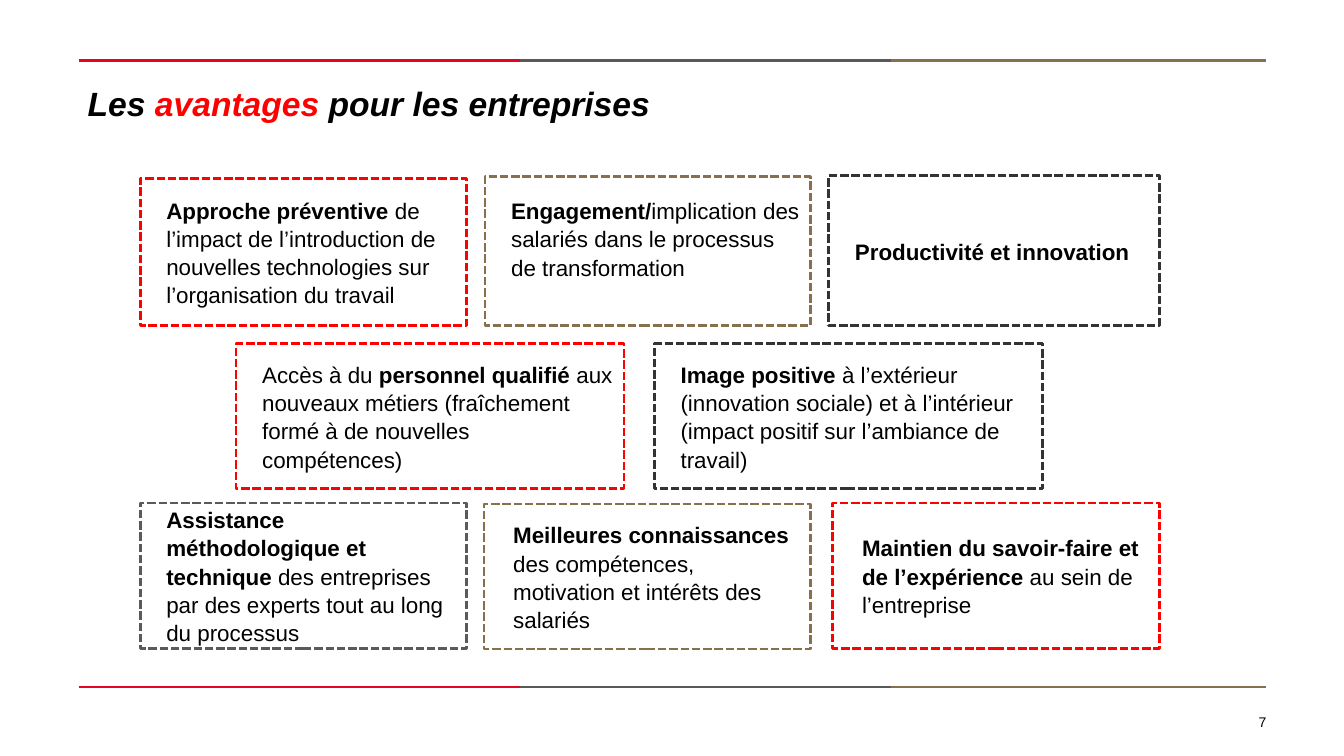
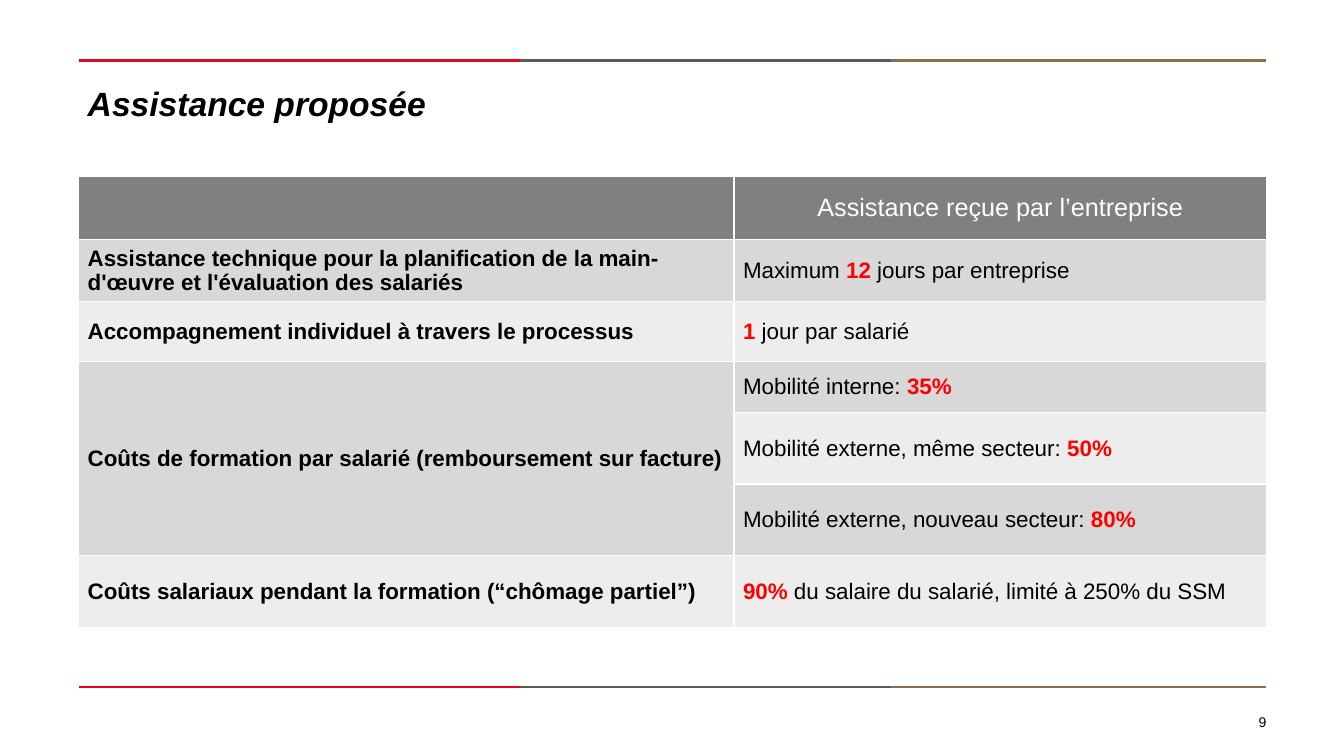
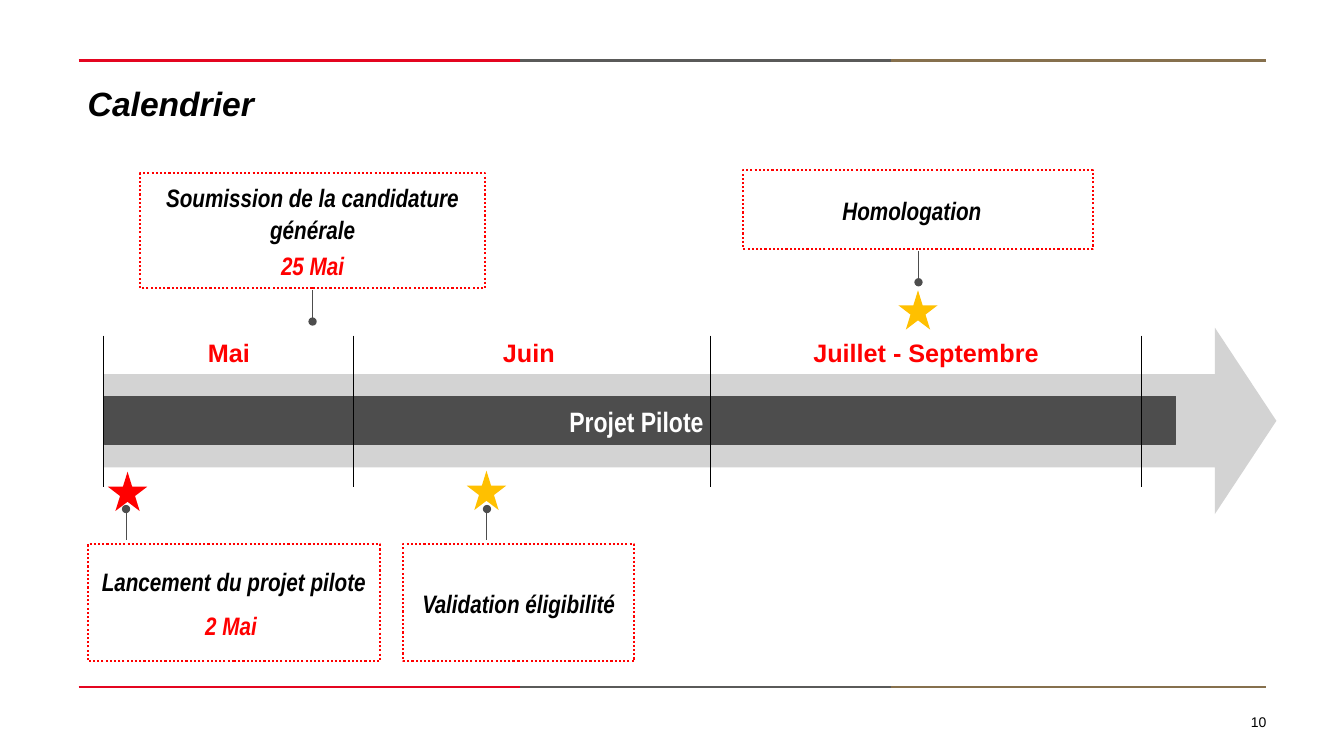
"""Build three slides on the advantages, assistance and calendar of a pilot project."""
from itertools import product

from lxml import etree
from pptx import Presentation
from pptx.dml.color import RGBColor
from pptx.enum.dml import MSO_LINE
from pptx.enum.shapes import MSO_CONNECTOR, MSO_SHAPE
from pptx.enum.text import MSO_ANCHOR, PP_ALIGN
from pptx.oxml.ns import qn
from pptx.util import Emu, Pt

COLORS = {
    "black": "000000", "white": "FFFFFF", "red": "FF0000", "band red": "E40520",
    "grey": "5A5A59", "brown": "86704D", "charcoal": "333333", "bar": "4D4D4D",
    "arrow": "D3D3D3", "gold": "FFC000", "header": "808080", "dark row": "D8D8D8",
    "light row": "EDEDED",
}
BANDS = [(78, 530, "band red"), (516, 887, "grey"), (884, 1256, "brown")]
LINE_SPACING = 1.05


def px(length):
    return Emu(length * 9144)


def rgb(name):
    return RGBColor.from_string(COLORS[name])


def regular(text, color="black"):
    return text, False, color


def bold(text, color="black"):
    return text, True, color


def write(frame, paragraphs, size, font="Arial", italic=False, align=PP_ALIGN.LEFT,
          spacing=LINE_SPACING, after=0):
    for index, spans in enumerate(paragraphs):
        para = frame.add_paragraph() if index else frame.paragraphs[0]
        para.alignment = align
        para.line_spacing = spacing
        para.space_after = Pt(after)
        for text, is_bold, color in spans:
            span = para.add_run()
            span.text = text
            span.font.size = Pt(size)
            span.font.name = font
            span.font.bold = is_bold
            span.font.italic = italic
            span.font.color.rgb = rgb(color)


def set_margins(target, left, top, right, bottom):
    target.margin_left, target.margin_top = px(left), px(top)
    target.margin_right, target.margin_bottom = px(right), px(bottom)


def add_text(page, place, paragraphs, size, margins, **style):
    frame = page.shapes.add_textbox(*map(px, place)).text_frame
    frame.word_wrap = True
    set_margins(frame, *margins)
    write(frame, paragraphs, size, **style)


def add_shape(page, kind, place, fill=None, line=None, width=0.25, dash=None):
    shape = page.shapes.add_shape(kind, *map(px, place))
    shape.shadow.inherit = False
    if fill:
        shape.fill.solid()
        shape.fill.fore_color.rgb = rgb(fill)
    else:
        shape.fill.background()
    if line:
        shape.line.color.rgb = rgb(line)
        shape.line.width = Pt(width)
        shape.line.dash_style = dash
    else:
        shape.line.fill.background()
    return shape


def add_box(page, place, paragraphs, size, margins=(0, 0, 0, 0), style=None, **look):
    box = add_shape(page, MSO_SHAPE.RECTANGLE, place, **look)
    frame = box.text_frame
    frame.word_wrap = True
    frame.vertical_anchor = MSO_ANCHOR.MIDDLE
    set_margins(frame, *margins)
    write(frame, paragraphs, size, **(style or {}))


def add_line(page, start, end, color, width, dot=False):
    line = page.shapes.add_connector(MSO_CONNECTOR.STRAIGHT, *map(px, start + end))
    line.line.color.rgb = rgb(color)
    line.line.width = Pt(width)
    properties = line._element.spPr
    if dot:
        etree.SubElement(properties.find(qn("a:ln")), qn("a:headEnd"), type="oval")
    etree.SubElement(properties, qn("a:effectLst"))


def set_borders(cell, color, sides):
    properties = cell._tc.get_or_add_tcPr()
    for index, side in enumerate("LRTB"):
        border = etree.Element(qn(f"a:ln{side}"), w=str(Pt(1)))
        if side in sides:
            fill = etree.SubElement(border, qn("a:solidFill"))
            etree.SubElement(fill, qn("a:srgbClr"), val=COLORS[color])
        else:
            etree.SubElement(border, qn("a:noFill"))
        properties.insert(index, border)


def add_table(page, left, top, widths, heights, border, sides):
    frame = page.shapes.add_table(len(heights), len(widths), px(left), px(top),
                                  px(sum(widths)), px(sum(heights)))
    table = frame.table
    table.first_row = table.horz_banding = False
    for column, width in zip(table.columns, widths):
        column.width = px(width)
    for row, height in zip(table.rows, heights):
        row.height = px(height)
    for row, column in product(range(len(heights)), range(len(widths))):
        cell = table.cell(row, column)
        cell.fill.background()
        set_margins(cell, 9, 4, 9, 4)
        set_borders(cell, border, sides)
    return table


def add_page(deck, title, number):
    page = deck.slides.add_slide(deck.slide_layouts[6])
    for top, (start, end, color) in product((682, 60), BANDS):
        add_line(page, (start, top), (end, top), color, 1.5)
    add_text(page, (78, 75, 1178, 100), [title], 24, (9, 5, 9, 5), italic=True)
    add_text(page, (1033, 708, 223, 17), [[regular(number)]], 10, (0, 0, 0, 0),
             align=PP_ALIGN.RIGHT, spacing=1.0)
    return page


def build_advantages(deck):
    page = add_page(deck, [bold("Les "), bold("avantages", "red"),
                           bold(" pour les entreprises")], "7")
    advantages = [
        ((139, 177, 324, 146), "red", 26, 4,
         [bold("Approche préventive "),
          regular("de l’impact de l’introduction de nouvelles technologies sur "
                  "l’organisation du travail")]),
        ((481, 175, 323, 148), "brown", 26, 29,
         [bold("Engagement/"),
          regular("implication des salariés dans le processus de transformation")]),
        ((822, 174, 328, 149), "charcoal", 26, 4, [bold("Productivité et innovation")]),
        ((234, 341, 385, 144), "red", 26, 4,
         [regular("Accès à du "), bold("personnel qualifié "),
          regular("aux nouveaux métiers (fraîchement formé à de nouvelles compétences)")]),
        ((649, 341, 385, 144), "charcoal", 26, 4,
         [bold("Image positive "),
          regular("à l’extérieur (innovation sociale) et à l’intérieur (impact positif "
                  "sur l’ambiance de travail)")]),
        ((139, 499, 324, 144), "grey", 26, 4,
         [bold("Assistance méthodologique et technique"),
          regular(" des entreprises par des experts tout au long du processus")]),
        ((480, 500, 324, 144), "brown", 29, 4,
         [bold("Meilleures connaissances "),
          regular("des compétences, motivation et intérêts des salariés")]),
        ((826, 499, 324, 144), "red", 29, 4,
         [bold("Maintien du savoir-faire et de l’expérience "),
          regular("au sein de l’entreprise")]),
    ]
    for place, color, left, bottom, spans in advantages:
        add_box(page, place, [spans], 16, (left, 4, 9, bottom),
                line=color, width=2, dash=MSO_LINE.SQUARE_DOT)


def build_assistance(deck):
    page = add_page(deck, [bold("Assistance proposée")], "9")
    rows = [
        ([], [regular("Assistance reçue par l’entreprise", "white")]),
        ([bold("Assistance technique pour la planification de la main-d'œuvre et "
               "l'évaluation des salariés")],
         [regular("Maximum "), bold("12 ", "red"), regular("jours par entreprise")]),
        ([bold("Accompagnement individuel à travers le processus")],
         [bold("1", "red"), regular(" jour par salarié")]),
        ([bold("Coûts de formation par salarié (remboursement sur facture)")],
         [regular("Mobilité interne: "), bold("35%", "red")]),
        ([], [regular("Mobilité externe, même secteur: "), bold("50%", "red")]),
        ([], [regular("Mobilité externe, nouveau secteur: "), bold("80%", "red")]),
        ([bold("Coûts salariaux pendant la formation (“chômage partiel”)")],
         [bold("90% ", "red"), regular("du salaire du salarié, limité à 250% du SSM")]),
    ]
    table = add_table(page, 78, 175, (650, 528), (63, 59, 59, 51, 71, 71, 71),
                      "white", "LRTB")
    table.cell(3, 0).merge(table.cell(5, 0))
    for row, contents in enumerate(rows):
        header = row == 0
        fill = "header" if header else ("light row", "dark row")[row % 2]
        for column, spans in enumerate(contents):
            cell = table.cell(row, column)
            cell.fill.solid()
            cell.fill.fore_color.rgb = rgb(fill)
            cell.vertical_anchor = MSO_ANCHOR.MIDDLE
            if spans:
                write(cell.text_frame, [spans], 18 if header else 16, spacing=1.0,
                      align=PP_ALIGN.CENTER if header else PP_ALIGN.LEFT)


def build_calendar(deck):
    page = add_page(deck, [bold("Calendrier")], "10")
    arrow = add_shape(page, MSO_SHAPE.RIGHT_ARROW, (103, 325, 1163, 185), "arrow")
    arrow.adjustments[1] = 0.33
    narrow = {"font": "Arial Narrow", "align": PP_ALIGN.CENTER}
    add_box(page, (103, 393, 1063, 48), [[bold("Projet Pilote ", "white")]], 20,
            style=narrow, fill="bar", line="bar")
    milestones = [
        ((139, 172, 342, 114), 3, 0,
         [[bold("Soumission de la candidature générale")], [bold("25 Mai", "red")]]),
        ((87, 540, 290, 116), 9, 0,
         [[bold("Lancement du projet pilote")], [bold("2 Mai ", "red")]]),
        ((737, 169, 347, 78), 3, 12, [[bold("Homologation")]]),
        ((400, 540, 229, 116), 9, 0, [[bold("Validation éligibilité")]]),
    ]
    for place, after, right, paragraphs in milestones:
        add_box(page, place, paragraphs, 18, (0, 0, right, 0),
                style={**narrow, "italic": True, "after": after},
                line="red", width=1.5, dash=MSO_LINE.ROUND_DOT)
    for left, top, color in [(107, 468, "red"), (463, 467, "gold"), (891, 288, "gold")]:
        add_shape(page, MSO_SHAPE.STAR_5_POINT, (left, top, 39, 39), color)
    for center, dot, end in [(310, 319, 288), (125, 505, 536), (911, 280, 249),
                             (483, 505, 536)]:
        add_line(page, (center, dot), (center, end), "bar", 0.75, dot=True)
    table = add_table(page, 103, 333, (248, 354, 427), (150,), "black", "LR")
    for column, period in enumerate(("Mai", "Juin ", "Juillet - Septembre")):
        write(table.cell(0, column).text_frame, [[bold(period, "red")]], 18,
              align=PP_ALIGN.CENTER, spacing=1.0)


def main():
    deck = Presentation()
    deck.slide_width, deck.slide_height = px(1333), px(750)
    build_advantages(deck)
    build_assistance(deck)
    build_calendar(deck)
    deck.save("out.pptx")


if __name__ == "__main__":
    main()
